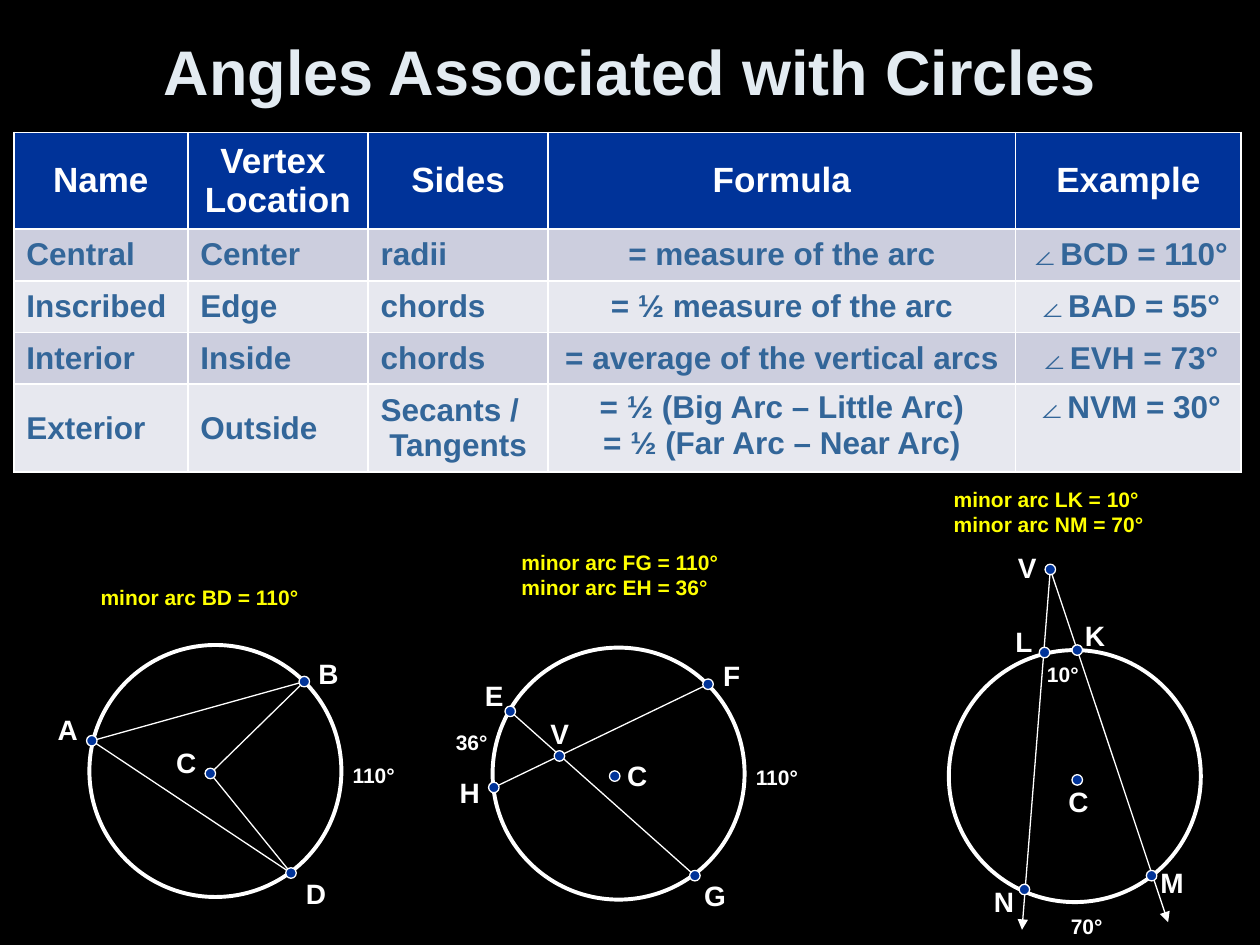
from lxml.etree import SubElement
from pptx import Presentation
from pptx.dml.color import RGBColor
from pptx.enum.shapes import MSO_CONNECTOR, MSO_SHAPE
from pptx.enum.text import MSO_ANCHOR, MSO_AUTO_SIZE, PP_ALIGN
from pptx.oxml.ns import qn
from pptx.util import Pt

COLORS = {
    "background": "000000", "title": "E3EBF1", "white": "FFFFFF",
    "blue": "003399", "body": "336699", "dark band": "CCCEDE",
    "light band": "E7E8EF", "note": "FFFF00",
}
DIAMETER = 144
DOT = 6

ROWS = [
    ["Name", "Vertex \vLocation", "Sides", "Formula", "Example"],
    ["Central", "Center", "radii", "= measure of the arc", "∠BCD = 110°"],
    ["Inscribed", "Edge", "chords", "= ½ measure of the arc", "∠BAD = 55°"],
    ["Interior", "Inside", "chords", "= average of the vertical arcs", "∠EVH = 73°"],
    ["Exterior", "Outside", "Secants /\v Tangents",
     "= ½ (Big Arc – Little Arc)\n= ½ (Far Arc – Near Arc)", "∠NVM = 30°"],
]
COLUMN_WIDTHS = [99.4, 103, 103, 267.1, 128.9]
ROW_HEIGHTS = [55.4, 29.5, 29.5, 29.5, 50.4]

FIGURES = [
    {
        "origin": (51.1, 368.6),
        "points": {"A": (1.4, 54.7), "B": (122.8, 20.9), "C": (69.1, 73.4), "D": (115.2, 130.3)},
        "lines": ["AD", "AB", "CB", "CD"],
        "labels": [("A", -25.2, 35.3), ("B", 123.8, 2.9), ("C", 42.5, 54), ("D", 116.6, 128.9)],
        "measures": [("110°", 143.3, 63.4)],
        "note": ("minor arc BD = 110°", -0.7, -38.2),
    },
    {
        "origin": (281.5, 370.1),
        "points": {"E": (10.1, 36.4), "F": (123.1, 20.9), "G": (115.6, 130.3),
                   "H": (0.7, 79.9), "V": (38.2, 61.9), "C": (69.8, 73.4)},
        "lines": ["EG", "HF"],
        "labels": [("E", -11.5, 14.4), ("F", 124.6, 2.9), ("G", 113.8, 128.2),
                   ("H", -25.9, 69.8), ("V", 25.9, 36), ("C", 69.8, 59.8)],
        "measures": [("110°", 143.3, 63.4), ("36°", -28.1, 43.2)],
        "note": ("minor arc FG = 110°\nminor arc EH = 36°", 9.4, -59.8),
    },
    {
        "origin": (542.2, 371.5),
        "points": {"V": (58, -46.1), "L": (54.7, 1.4), "K": (73.4, 0),
                   "N": (43.2, 136.8), "M": (115.9, 128.9), "C": (73.4, 74.2)},
        "rays": [("V", 41.8, 159.8), ("V", 125.3, 155.5)],
        "labels": [("V", 32.4, -60.5), ("K", 70.6, -21.6), ("L", 31, -18),
                   ("M", 113.8, 119.5), ("N", 18.7, 130.3), ("C", 61.2, 73.4)],
        "measures": [("70°", 62.6, 146.9), ("10°", 49, 2.9)],
        "note": ("minor arc LK = 10°\nminor arc NM = 70°", -4.3, -97.2),
    },
]


def color(name):
    """Return the named colour."""
    return RGBColor.from_string(COLORS[name])


def format_text(text_frame, size, color_name, alignment=PP_ALIGN.LEFT):
    """Format every run of a text frame in bold Arial."""
    for paragraph in text_frame.paragraphs:
        paragraph.alignment = alignment
        for run in paragraph.runs:
            run.font.name = "Arial"
            run.font.size = Pt(size)
            run.font.bold = True
            run.font.color.rgb = color(color_name)


def add_title(slide, left, top, width, height):
    """Place the slide title."""
    title = slide.shapes.title
    title.left, title.top, title.width, title.height = Pt(left), Pt(top), Pt(width), Pt(height)
    title.text_frame.text = "Angles Associated with Circles"
    title.text_frame.vertical_anchor = MSO_ANCHOR.MIDDLE
    format_text(title.text_frame, 36, "title", PP_ALIGN.CENTER)


def add_angle_table(slide, left, top):
    """Add the table of angle types."""
    table = slide.shapes.add_table(
        len(ROWS), len(COLUMN_WIDTHS), Pt(left), Pt(top),
        Pt(sum(COLUMN_WIDTHS)), Pt(sum(ROW_HEIGHTS))).table
    for column, width in zip(table.columns, COLUMN_WIDTHS):
        column.width = Pt(width)
    for row_index, texts in enumerate(ROWS):
        table.rows[row_index].height = Pt(ROW_HEIGHTS[row_index])
        header = row_index == 0
        fill = "blue" if header else "dark band" if row_index % 2 else "light band"
        for column_index, text in enumerate(texts):
            cell = table.cell(row_index, column_index)
            cell.text_frame.text = text
            cell.fill.solid()
            cell.fill.fore_color.rgb = color(fill)
            centered = header or column_index >= 3
            at_top = row_index == len(ROWS) - 1 and column_index >= 3
            cell.vertical_anchor = MSO_ANCHOR.TOP if at_top else MSO_ANCHOR.MIDDLE
            format_text(cell.text_frame, 20 if header else 18, "white" if header else "body",
                        PP_ALIGN.CENTER if centered else PP_ALIGN.LEFT)


def add_ellipse(shapes, left, top, diameter, line_width, fill=None):
    """Add a circle with a white outline."""
    shape = shapes.add_shape(MSO_SHAPE.OVAL, Pt(left), Pt(top), Pt(diameter), Pt(diameter))
    shape.shadow.inherit = False
    shape.line.color.rgb = color("white")
    shape.line.width = Pt(line_width)
    if fill:
        shape.fill.solid()
        shape.fill.fore_color.rgb = color(fill)
    else:
        shape.fill.background()


def add_line(shapes, start, end, **line_ends):
    """Add a thin white line with the given end marks."""
    connector = shapes.add_connector(MSO_CONNECTOR.STRAIGHT, *map(Pt, start + end))
    connector.line.color.rgb = color("white")
    connector.line.width = Pt(0.75)
    line = connector.line._get_or_add_ln()
    for tag, kind in line_ends.items():
        SubElement(line, qn(f"a:{tag}"), type=kind)
    SubElement(connector._element.spPr, qn("a:effectLst"))


def add_label(shapes, text, left, top, width, height, size, color_name="white"):
    """Add an unwrapped text label."""
    box = shapes.add_textbox(Pt(left), Pt(top), Pt(width), Pt(height))
    box.text_frame.text = text
    box.text_frame.word_wrap = False
    box.text_frame.auto_size = MSO_AUTO_SIZE.SHAPE_TO_FIT_TEXT
    format_text(box.text_frame, size, color_name)


def add_figure(slide, figure):
    """Add a circle with its lines, points and labels, placed from the circle's corner."""
    shapes = slide.shapes.add_group_shape().shapes
    left, top = figure["origin"]
    points = {name: (left + x, top + y) for name, (x, y) in figure["points"].items()}
    add_ellipse(shapes, left, top, DIAMETER, 2.25)
    for start, end in figure.get("lines", []):
        add_line(shapes, points[start], points[end], headEnd="oval", tailEnd="oval")
    for start, x, y in figure.get("rays", []):
        add_line(shapes, points[start], (left + x, top + y), tailEnd="triangle")
    for x, y in points.values():
        add_ellipse(shapes, x - DOT / 2, y - DOT / 2, DOT, 0.75, "blue")
    for text, x, y in figure["labels"]:
        add_label(shapes, text, left + x, top + y, 26, 26.6, 16)
    for text, x, y in figure["measures"]:
        add_label(shapes, text, left + x, top + y, 12.9 + 6.5 * len(text), 21.6, 12)
    text, x, y = figure["note"]
    height = 21.6 + 14.4 * text.count("\n")
    add_label(shapes, text, left + x, top + y, 128, height, 12, "note")


def main():
    """Build and save the presentation."""
    presentation = Presentation()
    presentation.slide_width, presentation.slide_height = Pt(720), Pt(540)
    slide = presentation.slides.add_slide(presentation.slide_layouts[5])
    slide.background.fill.solid()
    slide.background.fill.fore_color.rgb = color("background")
    add_title(slide, 36, 7.2, 648, 66.2)
    add_angle_table(slide, 7.9, 75.6)
    for figure in FIGURES:
        add_figure(slide, figure)
    presentation.save("out.pptx")


if __name__ == "__main__":
    main()
